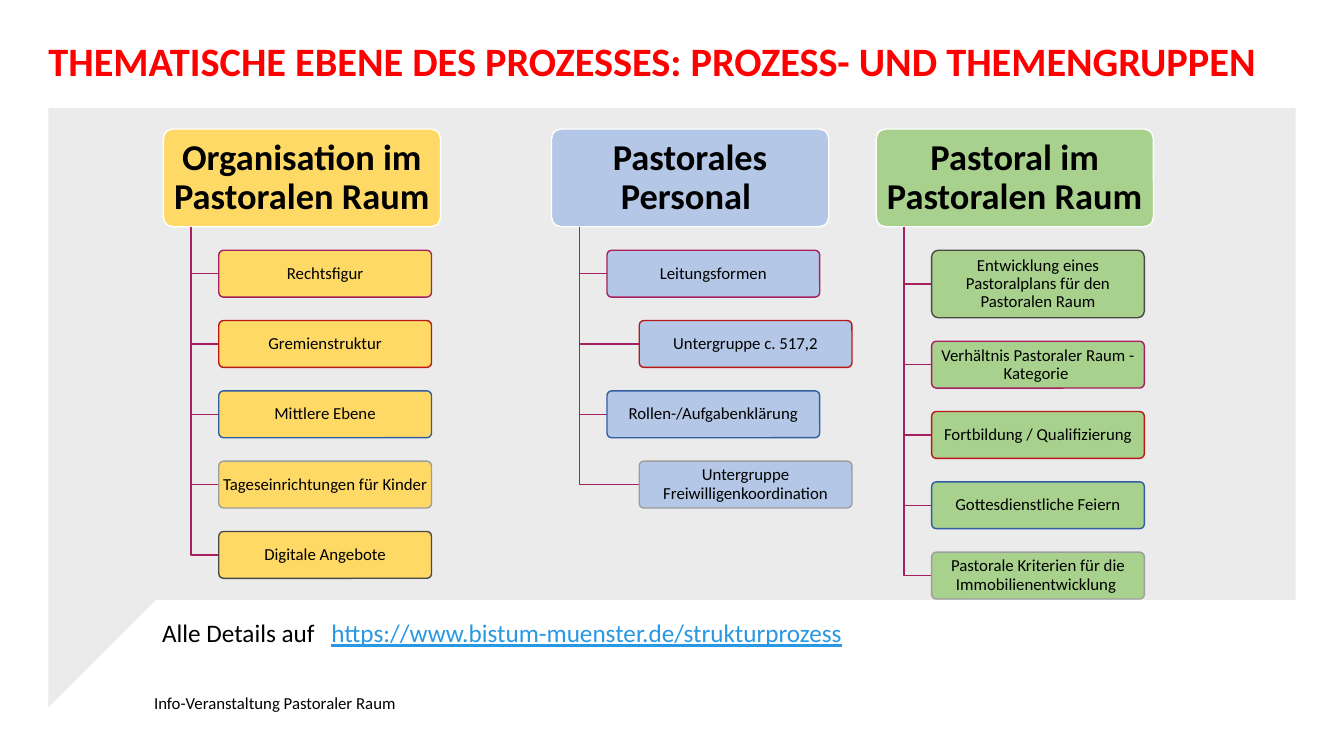
from itertools import cycle

from lxml import etree
from pptx import Presentation
from pptx.dml.color import RGBColor
from pptx.enum.shapes import MSO_SHAPE
from pptx.enum.text import MSO_ANCHOR, PP_ALIGN
from pptx.oxml.ns import qn
from pptx.util import Inches, Pt

ROUNDED = MSO_SHAPE.ROUNDED_RECTANGLE
CENTER, LEFT = PP_ALIGN.CENTER, PP_ALIGN.LEFT
MIDDLE, TOP = MSO_ANCHOR.MIDDLE, MSO_ANCHOR.TOP

BLACK = RGBColor(0x00, 0x00, 0x00)
WHITE = RGBColor(0xFF, 0xFF, 0xFF)
RED = RGBColor(0xFF, 0x00, 0x00)
PANEL_GREY = RGBColor(0xEB, 0xEB, 0xEB)
LINK_BLUE = RGBColor(0x29, 0x98, 0xE3)
YELLOW = RGBColor(0xFE, 0xD9, 0x66)
LIGHT_BLUE = RGBColor(0xB4, 0xC7, 0xE7)
GREEN = RGBColor(0xA8, 0xD1, 0x8D)
BERRY = RGBColor(0xA6, 0x1F, 0x5E)
TOPIC_OUTLINES = (BERRY, RGBColor(0xB9, 0x18, 0x17), RGBColor(0x30, 0x5E, 0xA2),
                  RGBColor(0x9D, 0x9D, 0x9D), RGBColor(0x49, 0x49, 0x49))

FONT = "Calibri"
SLIDE_W, SLIDE_H = 13.33, 7.5

# Tree grid in inches: a topic is two rows high, with one row of gap.
ROW = 0.031 * SLIDE_H
HEAD_TOP, HEAD_W, HEAD_H = 1.28, 2.75, 0.97
HEAD_BOTTOM = HEAD_TOP + HEAD_H
SPINE_SHIFT = 0.1 * HEAD_W
TOPIC_SHIFT = 0.2 * HEAD_W
SUBGROUP_INDENT = 0.32
TOPIC_W, TOPIC_H = 2.11, 2 * ROW
TALL_TOPIC_H = 0.67

# Group: heading, left edge, fill, topics as (text, height, indent)
GROUPS = [
    ("Organisation im Pastoralen Raum", 1.62, YELLOW, [
        ("Rechtsfigur", TOPIC_H, 0),
        ("Gremienstruktur", TOPIC_H, 0),
        ("Mittlere Ebene", TOPIC_H, 0),
        ("Tageseinrichtungen für Kinder", TOPIC_H, 0),
        ("Digitale Angebote", TOPIC_H, 0),
    ]),
    ("Pastorales Personal ", 5.47, LIGHT_BLUE, [
        ("Leitungsformen", TOPIC_H, 0),
        ("Untergruppe c. 517,2", TOPIC_H, SUBGROUP_INDENT),
        ("Rollen-/Aufgabenklärung", TOPIC_H, 0),
        ("Untergruppe Freiwilligenkoordination", TOPIC_H, SUBGROUP_INDENT),
    ]),
    ("Pastoral im Pastoralen Raum", 8.69, GREEN, [
        ("Entwicklung eines Pastoralplans für den Pastoralen Raum",
         TALL_TOPIC_H, 0),
        ("Verhältnis Pastoraler Raum - Kategorie ", TOPIC_H, 0),
        ("Fortbildung / Qualifizierung", TOPIC_H, 0),
        ("Gottesdienstliche Feiern", TOPIC_H, 0),
        ("Pastorale Kriterien für die Immobilienentwicklung ", TOPIC_H, 0),
    ]),
]


def place(*lengths):
    return [Inches(length) for length in lengths]


def format_frame(frame, size, align=LEFT, anchor=MIDDLE, margins=(0.1, 0),
                 color=BLACK, bold=False, spacing=1.0):
    """Set wrapping, margins (side, top and bottom) and paragraph format."""
    frame.word_wrap = True
    frame.vertical_anchor = anchor
    frame.margin_left = frame.margin_right = Inches(margins[0])
    frame.margin_top = frame.margin_bottom = Inches(margins[1])
    paragraph = frame.paragraphs[0]
    paragraph.alignment = align
    paragraph.line_spacing = spacing
    font = paragraph.font
    font.name, font.size, font.bold = FONT, Pt(size), bold
    font.color.rgb = color


def add_outline(slide, points, closed):
    corners = [place(*point) for point in points]
    builder = slide.shapes.build_freeform(*corners[0], scale=1.0)
    builder.add_line_segments(corners[1:], close=closed)
    outline = builder.convert_to_shape()
    outline.shadow.inherit = False
    return outline


def add_panel(slide):
    panel = add_outline(slide, [(0.48, 1.07), (12.85, 1.07), (12.85, 5.95),
                                (1.55, 5.95), (0.48, 7.02)], closed=True)
    panel.fill.solid()
    panel.fill.fore_color.rgb = PANEL_GREY
    panel.line.fill.background()


def add_branch(slide, spine_x, topic_x, topic_y):
    """Draw the elbow line from a heading down to the side of a topic."""
    branch = add_outline(slide, [(spine_x, HEAD_BOTTOM), (spine_x, topic_y),
                                 (topic_x, topic_y)], closed=False)
    branch.fill.background()
    branch.line.color.rgb = BERRY
    branch.line.width = Pt(1)


def add_box(slide, text, bounds, fill, outline, size, margins, bold=False):
    box = slide.shapes.add_shape(ROUNDED, *place(*bounds))
    box.shadow.inherit = False
    box.adjustments[0] = 0.1
    box.fill.solid()
    box.fill.fore_color.rgb = fill
    box.line.color.rgb = outline
    box.line.width = Pt(1)
    box.text_frame.text = text
    format_frame(box.text_frame, size, CENTER, margins=margins, bold=bold,
                 spacing=0.9)


def add_group(slide, heading, left, fill, topics, outlines):
    add_box(slide, heading, (left, HEAD_TOP, HEAD_W, HEAD_H), fill, WHITE,
            26, (0.05, 0.04), bold=True)
    top = HEAD_BOTTOM + ROW
    for text, height, indent in topics:
        topic_x = left + TOPIC_SHIFT + indent
        add_branch(slide, left + SPINE_SHIFT, topic_x, top + height / 2)
        add_box(slide, text, (topic_x, top, TOPIC_W, height), fill,
                next(outlines), 12, (0.02, 0.02))
        top += height + ROW


def add_title(slide):
    title = slide.shapes.title
    title.left, title.top, title.width, title.height = place(
        0.48, 0.41, 12.39, 0.67)
    title.text_frame.text = (
        "THEMATISCHE EBENE DES PROZESSES: PROZESS- UND THEMENGRUPPEN")
    format_frame(title.text_frame, 28.8, anchor=TOP, margins=(0, 0),
                 color=RED, bold=True, spacing=0.9)


def add_details(slide):
    frame = slide.shapes.add_textbox(*place(1.51, 6.08, 8.57, 0.4)).text_frame
    paragraph = frame.paragraphs[0]
    tabs = etree.SubElement(paragraph._p.get_or_add_pPr(), qn("a:tabLst"))
    etree.SubElement(tabs, qn("a:tab"), pos=str(Inches(1.68)), algn="l")
    paragraph.add_run().text = "Alle Details auf\t"
    address = paragraph.add_run()
    address.text = "https://www.bistum-muenster.de/strukturprozess"
    format_frame(frame, 18, anchor=TOP, margins=(0.1, 0.05))
    address.font.color.rgb = LINK_BLUE
    address.font.underline = True


def add_footer(slide):
    frame = slide.shapes.add_textbox(*place(1.43, 6.82, 8.27, 0.3)).text_frame
    frame.text = "Info-Veranstaltung Pastoraler Raum"
    format_frame(frame, 12)


def main():
    presentation = Presentation()
    presentation.slide_width, presentation.slide_height = place(SLIDE_W, SLIDE_H)
    title_only = presentation.slide_layouts[5]
    slide = presentation.slides.add_slide(title_only)
    add_panel(slide)
    add_footer(slide)
    add_title(slide)
    outlines = cycle(TOPIC_OUTLINES)
    for heading, left, fill, topics in GROUPS:
        add_group(slide, heading, left, fill, topics, outlines)
    add_details(slide)
    presentation.save("out.pptx")


if __name__ == "__main__":
    main()
